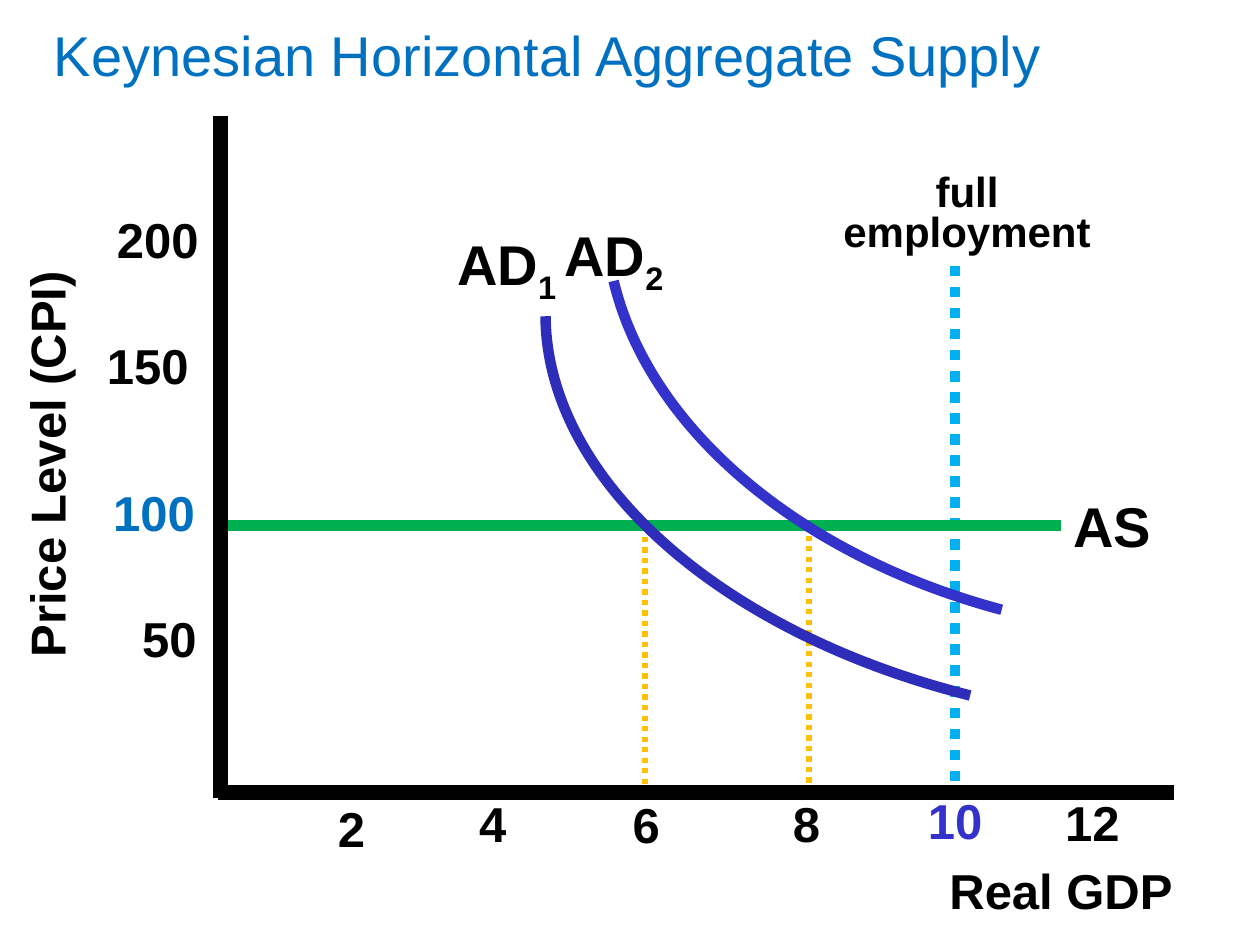
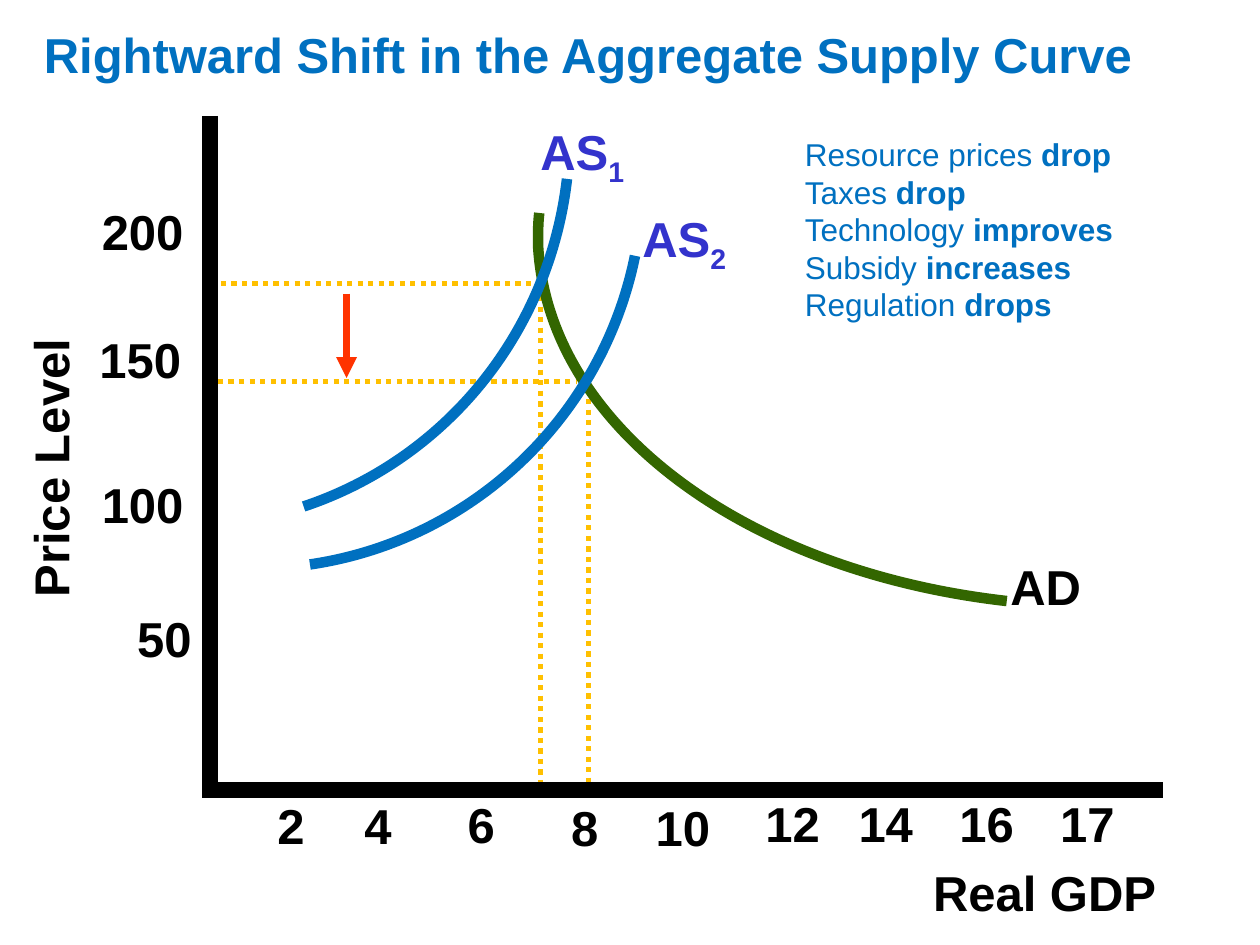
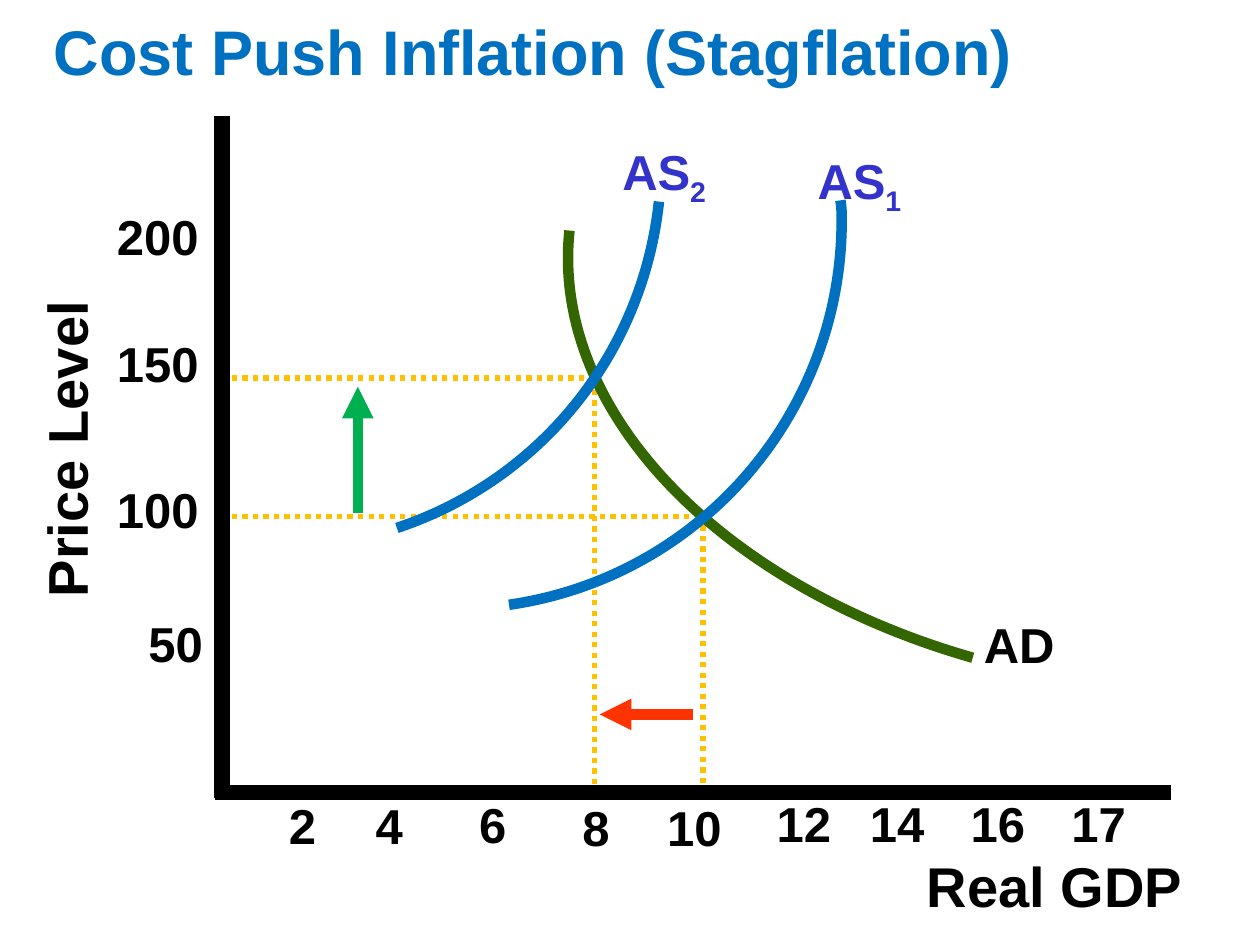
"""Build three slides of aggregate supply and demand diagrams."""
from lxml import etree
from pptx import Presentation
from pptx.dml.color import RGBColor
from pptx.enum.dml import MSO_LINE
from pptx.enum.text import PP_ALIGN
from pptx.oxml.ns import qn
from pptx.util import Inches, Pt

LEFT, CENTER = PP_ALIGN.LEFT, PP_ALIGN.CENTER
DOTTED = MSO_LINE.ROUND_DOT
FONT = "Arial"
COLORS = {
    "black": "000000", "blue": "0070C0", "indigo": "3333CC", "navy": "2D2DB9",
    "gold": "FFC000", "sky": "00B0F0", "green": "00B050", "olive": "336600",
    "red": "FF3300",
}
OUTPUT_TICKS = [
    ("2", 2.31, 6.32), ("4", 3.0, 6.32), ("6", 3.82, 6.31),
    ("8", 4.64, 6.33), ("10", 5.42, 6.33), ("12", 6.29, 6.3),
    ("14", 7.03, 6.3), ("16", 7.83, 6.3), ("17", 8.63, 6.3),
]


def color(name):
    return RGBColor.from_string(COLORS[name])


class Diagram:
    """Holds the presentation style and the slide being drawn."""

    def __init__(self):
        self.deck = Presentation()
        self.deck.slide_width, self.deck.slide_height = Inches(10), Inches(7.5)
        self.slide = None

    def new_slide(self):
        self.slide = self.deck.slides.add_slide(self.deck.slide_layouts[6])

    def text(self, content, left, top, width, height=0.53, size=28, ink="black",
             bold=True, align=LEFT, spacing=0.9, turn=0, subscript=""):
        box = self.slide.shapes.add_textbox(
            Inches(left), Inches(top), Inches(width), Inches(height))
        box.rotation = turn
        box.text_frame.word_wrap = True
        paragraph = box.text_frame.paragraphs[0]
        self.style(paragraph, size, ink, bold, align, spacing)
        paragraph.add_run().text = content
        if subscript:
            lowered = paragraph.add_run()
            lowered.text = subscript
            lowered._r.get_or_add_rPr().set("baseline", "-25000")

    def style(self, paragraph, size, ink, bold, align, spacing):
        paragraph.alignment, paragraph.line_spacing = align, spacing
        font = paragraph.font
        font.name, font.size, font.bold = FONT, Pt(size), bold
        font.color.rgb = color(ink)

    def title(self, content, left, top, size, bold=True, spacing=0.9):
        self.text(content, left, top, 9.5, 0.59, size, "blue", bold,
                  spacing=spacing)

    def factors(self, effects, left, top, width, height):
        frame = self.slide.shapes.add_textbox(
            Inches(left), Inches(top), Inches(width), Inches(height)).text_frame
        frame.word_wrap = True
        for index, (factor, change) in enumerate(effects):
            paragraph = frame.add_paragraph() if index else frame.paragraphs[0]
            self.style(paragraph, 18, "blue", False, LEFT, 0.8)
            paragraph.space_before = Pt(4.2)
            paragraph.add_run().text = factor + " "
            emphasis = paragraph.add_run()
            emphasis.text, emphasis.font.bold = change, True

    def line(self, start, end, ink, width, dash=None, arrow=False):
        stroke = self.slide.shapes.add_connector(
            1, *(Inches(value) for value in (*start, *end)))
        stroke.line.color.rgb, stroke.line.width = color(ink), Pt(width)
        if dash:
            stroke.line.dash_style = dash
        properties = stroke._element.spPr
        if arrow:
            outline = properties.find(qn("a:ln"))
            etree.SubElement(outline, qn("a:tailEnd"), type="triangle")
        etree.SubElement(properties, qn("a:effectLst"))

    def guides(self, *ends):
        for start, end in ends:
            self.line(start, end, "gold", 3, DOTTED)

    def curve(self, points, ink):
        """Draw a Bezier path: a start, then three points per segment."""
        builder = self.slide.shapes.build_freeform(
            *(Inches(value) for value in points[0]))
        builder.add_line_segments(
            [(Inches(x), Inches(y)) for x, y in points[1:]], close=False)
        shape = builder.convert_to_shape()
        shape.shadow.inherit = False
        shape.fill.background()
        shape.line.color.rgb, shape.line.width = color(ink), Pt(6)
        steps = list(shape._element.iter(qn("a:lnTo")))
        for first in range(0, len(steps), 3):
            bend = etree.Element(qn("a:cubicBezTo"))
            steps[first].addprevious(bend)
            for step in steps[first:first + 3]:
                bend.append(step[0])
                step.getparent().remove(step)

    def axes(self, price_x, output_left, output_right, output_y):
        self.line((price_x, 0.92), (price_x, 6.33), "black", 9)
        self.line((output_left, output_y), (output_right, output_y), "black", 9)

    def price_ticks(self, ticks, special=None):
        for label, left, top in ticks:
            self.text(label, left, top, 1.2,
                      ink="blue" if label == special else "black")

    def output_ticks(self, ticks, shift=0.0, special=None):
        for label, middle, top in ticks:
            self.text(label, middle + shift - 0.42, top, 0.84, align=CENTER,
                      ink="indigo" if label == special else "black")

    def axis_names(self, price, price_at, output_at, size=28):
        self.text(price, *price_at, 3.5, size=size, align=CENTER, turn=270)
        self.text("Real GDP", *output_at, 2.3, size=size, align=CENTER)


def keynesian_supply(diagram):
    diagram.new_slide()
    diagram.guides(((6.42, 4.25), (6.42, 6.33)), ((5.12, 4.26), (5.12, 6.34)))
    diagram.line((7.58, 2.11), (7.58, 6.25), "sky", 6, DOTTED)
    diagram.price_ticks([("200", 0.83, 1.67), ("150", 0.75, 2.67),
                         ("100", 0.8, 3.83), ("50", 1.03, 4.83)], "100")
    diagram.output_ticks([("2", 2.79, 6.34), ("4", 3.91, 6.3), ("6", 5.13, 6.31),
                          ("8", 6.4, 6.3), ("10", 7.58, 6.28),
                          ("12", 8.67, 6.29)], special="10")
    diagram.line((1.75, 4.17), (8.42, 4.17), "green", 6)
    diagram.axis_names("Price Level (CPI)", (-1.35, 3.42), (7.27, 6.83))
    diagram.text("AS", 8.42, 3.91, 1.08, size=32)
    diagram.curve([(7.95, 4.84), (6.34, 4.41), (5.15, 3.4), (4.87, 2.23)],
                  "indigo")
    diagram.text("AD", 4.38, 1.71, 1.25, size=32, subscript="2")
    diagram.curve([(7.7, 5.52), (5.71, 5.02), (4.34, 3.8), (4.33, 2.51)], "navy")
    diagram.text("AD", 3.53, 1.78, 1.33, size=32, subscript="1")
    diagram.title("Keynesian Horizontal Aggregate Supply", 0.33, 0.17, 32, False)
    diagram.text("full employment", 6.5, 1.34, 2.35, 0.75, 24, align=CENTER,
                 spacing=0.8)
    diagram.axes(1.75, 1.73, 9.32, 6.29)


def rightward_shift(diagram):
    diagram.new_slide()
    diagram.guides(((1.73, 3.03), (4.57, 3.03)), ((1.67, 2.25), (4.25, 2.25)),
                   ((4.29, 2.35), (4.29, 6.35)), ((4.67, 3), (4.67, 6.33)))
    diagram.price_ticks([("200", 0.71, 1.6), ("150", 0.69, 2.62),
                         ("100", 0.71, 3.77), ("50", 0.99, 4.83)])
    diagram.output_ticks(OUTPUT_TICKS)
    diagram.curve([(7.99, 4.77), (5.88, 4.53), (4.34, 3.36), (4.27, 1.94),
                   (4.27, 1.85), (4.27, 1.77), (4.28, 1.69)], "olive")
    diagram.title("Rightward Shift in the Aggregate Supply Curve", 0.25, 0.2, 28)
    diagram.axis_names("Price Level", (-1.32, 3.45), (7.14, 6.85))
    diagram.curve([(5.04, 2.03), (4.78, 3.31), (3.75, 4.29), (2.46, 4.48)],
                  "blue")
    diagram.curve([(4.5, 1.42), (4.36, 2.63), (3.55, 3.64), (2.41, 4.02)], "blue")
    diagram.text("AS", 4.19, 0.92, 1.17, ink="indigo", subscript="1")
    diagram.text("AS", 5, 1.61, 1.08, ink="indigo", subscript="2")
    diagram.text("AD", 7.92, 4.42, 1.17)
    diagram.line((2.75, 2.33), (2.75, 3), "red", 4, arrow=True)
    diagram.axes(1.67, 1.65, 9.23, 6.27)
    diagram.factors([("Resource prices", "drop"), ("Taxes", "drop"),
                     ("Technology", "improves"), ("Subsidy", "increases"),
                     ("Regulation", "drops")], 6.29, 1.08, 3.3, 1.56)


def cost_push_inflation(diagram):
    diagram.new_slide()
    diagram.guides(((1.84, 3), (4.66, 3)), ((4.72, 3.01), (4.72, 6.33)),
                   ((1.84, 4.1), (5.51, 4.1)), ((5.58, 4.17), (5.58, 6.33)))
    diagram.price_ticks([("200", 0.83, 1.64), ("150", 0.83, 2.65),
                         ("100", 0.83, 3.81), ("50", 1.08, 4.87)])
    diagram.output_ticks(OUTPUT_TICKS, shift=0.09)
    diagram.curve([(7.72, 5.22), (5.69, 4.64), (4.37, 3.24), (4.52, 1.83)],
                  "olive")
    diagram.axis_names("Price Level", (-1.22, 3.3), (7.22, 6.77), 32)
    diagram.curve([(6.67, 1.59), (6.68, 1.64), (6.68, 1.7), (6.68, 1.75),
                   (6.68, 3.28), (5.56, 4.58), (4.04, 4.8)], "blue")
    diagram.curve([(5.23, 1.6), (5.1, 2.81), (4.29, 3.81), (3.15, 4.19)], "blue")
    diagram.text("AD", 7.71, 4.88, 1.08)
    diagram.text("AS", 6.39, 1.15, 1.17, ink="indigo", subscript="1")
    diagram.text("AS", 4.84, 1.08, 1.11, ink="indigo", subscript="2")
    diagram.line((2.84, 4.07), (2.84, 3.07), "green", 6, arrow=True)
    diagram.line((5.5, 5.67), (4.76, 5.67), "red", 6, arrow=True)
    diagram.axes(1.76, 1.71, 9.29, 6.29)
    diagram.title("Cost Push Inflation (Stagflation)", 0.33, 0.17, 36, spacing=0.8)


def main():
    diagram = Diagram()
    keynesian_supply(diagram)
    rightward_shift(diagram)
    cost_push_inflation(diagram)
    diagram.deck.save("out.pptx")


if __name__ == "__main__":
    main()
